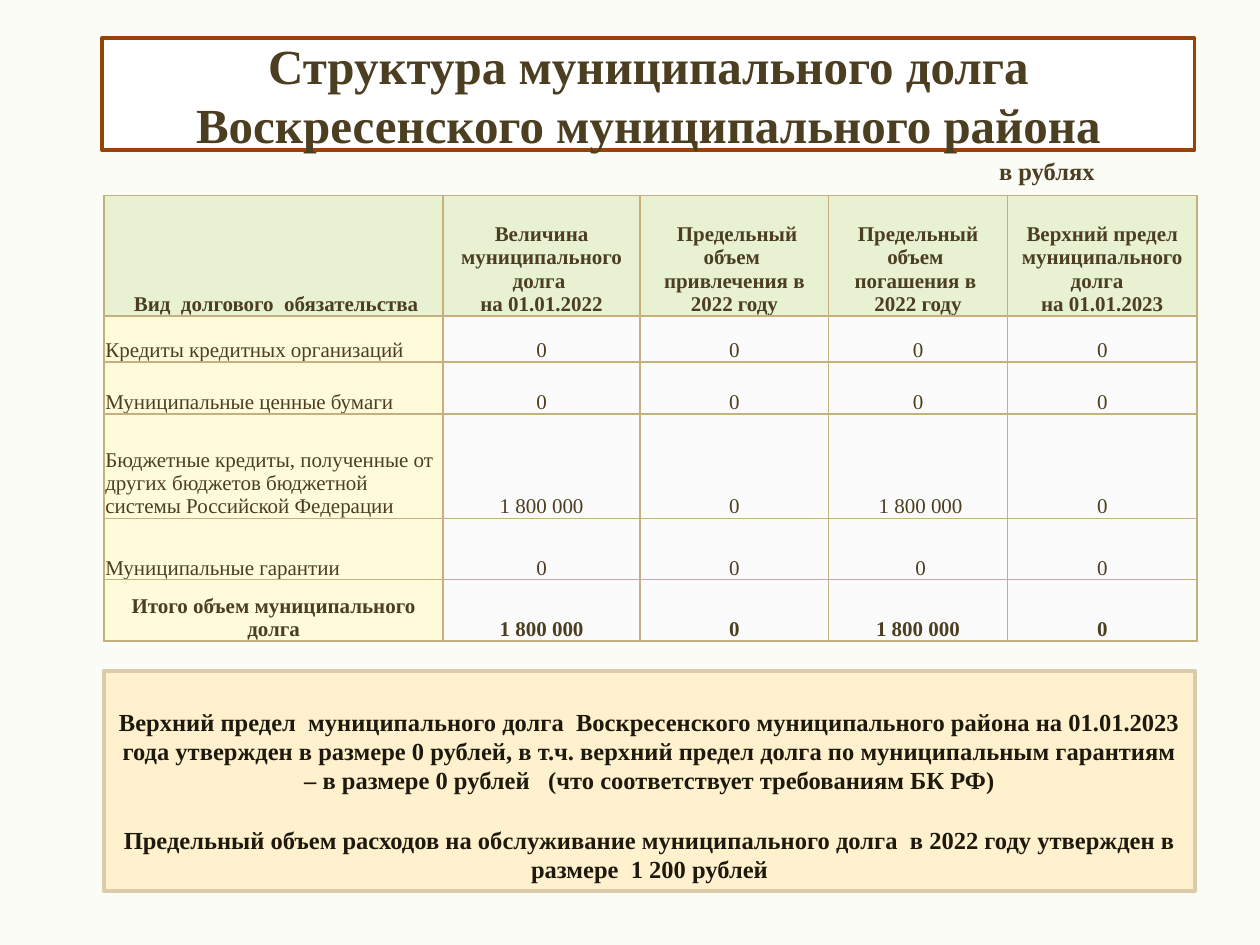
from dataclasses import dataclass

from lxml import etree
from pptx import Presentation
from pptx.dml.color import RGBColor
from pptx.enum.shapes import MSO_SHAPE
from pptx.enum.text import MSO_ANCHOR, PP_ALIGN
from pptx.oxml.ns import qn
from pptx.util import Pt


@dataclass(frozen=True)
class Theme:
    font: str = "Times New Roman"
    page: str = "FAFCF5"
    text: str = "4B3E21"
    note_text: str = "1E190D"
    title_fill: str = "FFFFFF"
    title_line: str = "964305"
    note_fill: str = "FFF1CE"
    note_line: str = "DACCAB"
    head_fill: str = "E8F2D3"
    label_fill: str = "FEFBDA"
    value_fill: str = "FBFBFB"
    border: str = "C6B07E"
    title_size: int = 28
    note_size: int = 14
    table_size: int = 12


T = Theme()

COL_WIDTHS = [193.7, 112.6, 107.8, 102.1, 108.5]
ROW_HEIGHTS = [69, 26.2, 29.7, 59.7, 35.1, 35.1]
HEADERS = [
    "\u00a0Вид  долгового  обязательства",
    "Величина муниципального долга \nна 01.01.2022",
    "\u00a0Предельный объем \nпривлечения в 2022 году",
    "Предельный объем \nпогашения в \n2022 году",
    "Верхний предел муниципального долга  \n на 01.01.2023\u00a0",
]
DEBTS = [
    ["Кредиты кредитных организаций", "0", "0", "0", "0"],
    ["Муниципальные ценные бумаги", "0", "0", "0", "0"],
    ["Бюджетные кредиты, полученные от других бюджетов бюджетной системы "
     "Российской Федерации", "1 800 000", "0", "\u00a01 800 000", "0"],
    ["Муниципальные гарантии", "0", "0", " 0", "0"],
]
TOTAL = ["Итого объем муниципального долга", "1 800 000", "0", "1 800 000", "0"]
NOTES = [
    "Верхний предел  муниципального долга  Воскресенского муниципального района "
    "на 01.01.2023 года утвержден в размере 0 рублей, в т.ч. верхний предел долга "
    "по муниципальным гарантиям – в размере 0 рублей   (что соответствует "
    "требованиям БК РФ)",
    "Предельный объем расходов на обслуживание муниципального долга  в 2022 году "
    "утвержден в размере  1 200 рублей",
]


def rgb(value):
    return RGBColor.from_string(value)


def paint(sp, fill, line, width):
    sp.fill.solid()
    sp.fill.fore_color.rgb = rgb(fill)
    sp.line.color.rgb = rgb(line)
    sp.line.width = Pt(width)


def set_text(tf, text, size, color=T.text, bold=True, align=PP_ALIGN.CENTER):
    tf.text = text
    for p in tf.paragraphs:
        p.alignment = align
        p.font.name = T.font
        p.font.size = Pt(size)
        p.font.bold = bold
        p.font.color.rgb = rgb(color)


def set_borders(cell):
    """Draw all four sides; they precede the fill in the cell properties."""
    props = cell._tc.get_or_add_tcPr()
    for i, side in enumerate(("a:lnL", "a:lnR", "a:lnT", "a:lnB")):
        ln = etree.Element(qn(side), w=str(Pt(1)))
        fill = etree.SubElement(ln, qn("a:solidFill"))
        etree.SubElement(fill, qn("a:srgbClr"), val=T.border)
        props.insert(i, ln)


def add_title(s, x, y, w, h):
    sp = s.shapes.title
    sp.left, sp.top, sp.width, sp.height = Pt(x), Pt(y), Pt(w), Pt(h)
    geom = etree.Element(qn("a:prstGeom"), prst="roundRect")
    etree.SubElement(geom, qn("a:avLst"))
    sp._element.spPr.insert(1, geom)
    paint(sp, T.title_fill, T.title_line, 2)
    sp.text_frame.vertical_anchor = MSO_ANCHOR.MIDDLE
    set_text(sp.text_frame,
             "Структура муниципального долга Воскресенского муниципального района",
             T.title_size)


def add_unit(s, x, y, w, h):
    tf = s.shapes.add_textbox(Pt(x), Pt(y), Pt(w), Pt(h)).text_frame
    tf.word_wrap = False
    set_text(tf, "в рублях", T.note_size, align=PP_ALIGN.LEFT)


def add_debt_table(s, x, y):
    rows = [HEADERS, *DEBTS, TOTAL]
    table = s.shapes.add_table(len(rows), len(HEADERS), Pt(x), Pt(y),
                               Pt(sum(COL_WIDTHS)), Pt(sum(ROW_HEIGHTS))).table
    for col, width in zip(table.columns, COL_WIDTHS):
        col.width = Pt(width)
    for row, height in zip(table.rows, ROW_HEIGHTS):
        row.height = Pt(height)
    for r, row in enumerate(rows):
        strong = row is HEADERS or row is TOTAL
        for c, text in enumerate(row):
            cell = table.cell(r, c)
            cell.margin_left = cell.margin_right = cell.margin_top = Pt(0.7)
            cell.margin_bottom = Pt(0)
            cell.vertical_anchor = MSO_ANCHOR.BOTTOM
            fill = T.head_fill if r == 0 else T.value_fill if c else T.label_fill
            cell.fill.solid()
            cell.fill.fore_color.rgb = rgb(fill)
            set_borders(cell)
            align = PP_ALIGN.CENTER if strong or c else PP_ALIGN.LEFT
            set_text(cell.text_frame, text, T.table_size, bold=strong, align=align)


def add_note(s, x, y, w, h):
    sp = s.shapes.add_shape(MSO_SHAPE.RECTANGLE, Pt(x), Pt(y), Pt(w), Pt(h))
    sp.shadow.inherit = False
    paint(sp, T.note_fill, T.note_line, 2.25)
    tf = sp.text_frame
    tf.word_wrap = True
    tf.vertical_anchor = MSO_ANCHOR.TOP
    tf.margin_top = Pt(20.5)
    set_text(tf, "\n".join(NOTES), T.note_size, T.note_text)
    tf.paragraphs[1].space_before = Pt(17)


def main():
    prs = Presentation()
    prs.slide_width, prs.slide_height = Pt(720), Pt(540)
    s = prs.slides.add_slide(prs.slide_layouts[5])
    s.background.fill.solid()
    s.background.fill.fore_color.rgb = rgb(T.page)
    add_title(s, 58.3, 21.8, 624.4, 64)
    add_unit(s, 563.8, 85.7, 69.8, 24.5)
    add_debt_table(s, 59.5, 111.6)
    add_note(s, 59.5, 383.3, 623.5, 126)
    prs.save("out.pptx")


if __name__ == "__main__":
    main()
